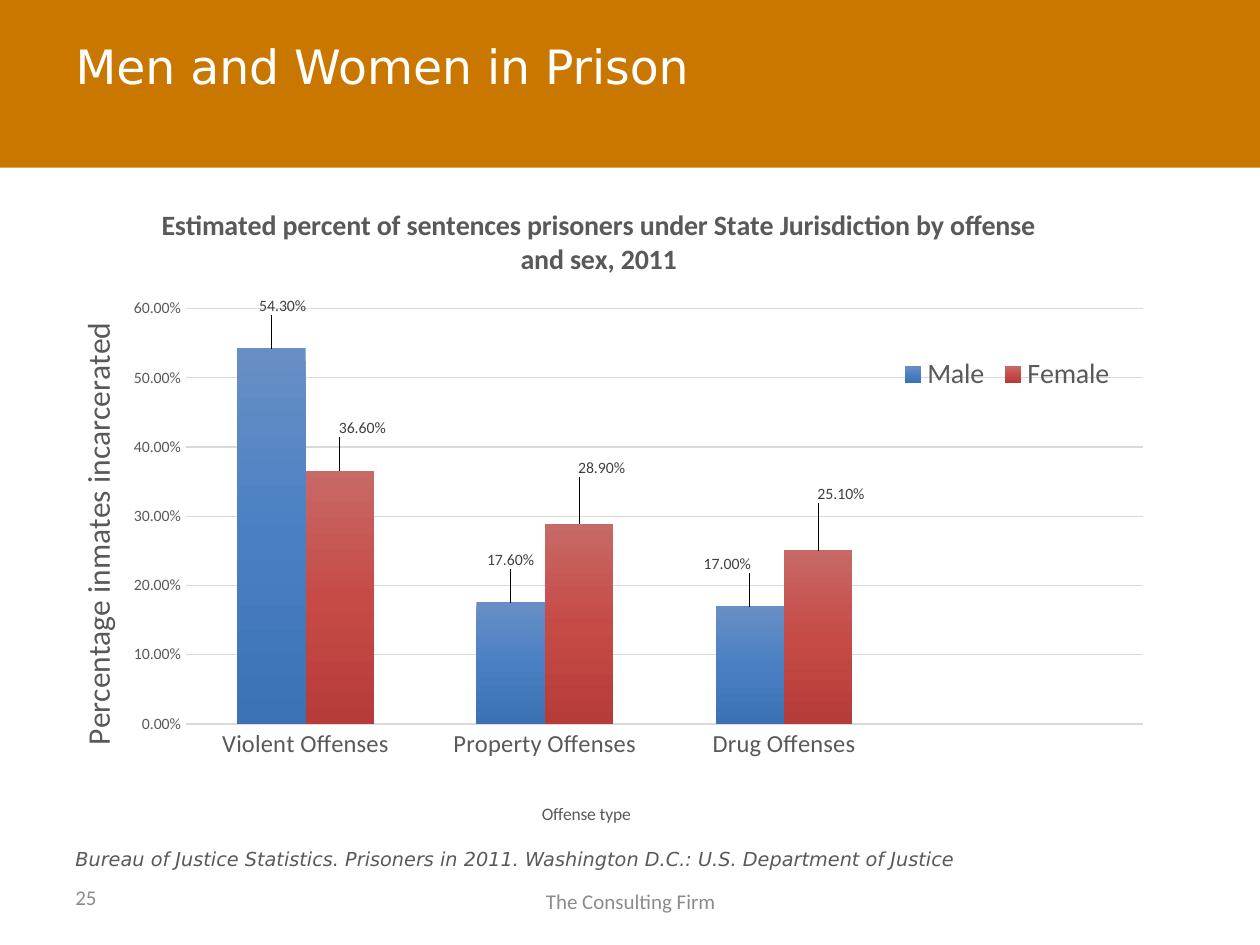
from pptx import Presentation, util as u
from pptx.chart.data import CategoryChartData
from pptx.dml.color import RGBColor
from pptx.enum import chart as ch, shapes, text
from pptx.oxml import parse_xml
from pptx.oxml.ns import nsdecls, qn

COLORS = {"band": "CA7700", "white": "FFFFFF", "text": "595959",
          "foot": "8C8C8C", "label": "404040", "grid": "D9D9D9"}
SANS, BODY = "DejaVu Sans", "Calibri"

TITLE = "Men and Women in Prison"
# text, box in cm (left, top, width, height), alignment, font
NOTES = [
    ("25", (1.27, 17.58, 5.92, 1.02), "LEFT",
     dict(size=12, name=BODY, color="foot")),
    ("The Consulting Firm", (8.69, 17.65, 8.05, 1.02), "CENTER",
     dict(size=12, name=BODY, color="foot")),
    ("Bureau of Justice Statistics. Prisoners in 2011. "
     "Washington D.C.: U.S. Department of Justice",
     (1.27, 16.94, 19.89, 0.74), "LEFT",
     dict(size=11, name=SANS, color="text", italic=True)),
]
HEAD = ("Estimated percent of sentences prisoners under State Jurisdiction "
        "by offense and sex, 2011")
CATS = ["Violent Offenses", "Property Offenses", "Drug Offenses", ""]
# values, gradient from top to bottom, label shifts as shares of the chart
SERIES = {
    "Male": ([0.543, 0.176, 0.17, None], ["688FC5", "4A80C3", "3B72B3"],
             [(0.01, -0.04), (0, -0.04), (-0.02, -0.04)]),
    "Female": ([0.366, 0.289, 0.251, None], ["C76967", "C64B47", "B63C39"],
               [(0.02, -0.04), (0.02, -0.06), (0.02, -0.06)]),
}


def style(font, color, size, **rest):
    font.color.rgb = RGBColor.from_string(COLORS[color])
    font.size = u.Pt(size)
    for key, val in {"name": BODY, "bold": False, **rest}.items():
        setattr(font, key, val)


def place(node, spot, at=1, edge=True, inner=False):
    """Give a chart part a manual layout: x, y and maybe w, h as shares."""
    for old in node.findall(qn("c:layout")):
        node.remove(old)
    tags = '<c:layoutTarget val="inner"/>' if inner else ""
    if edge:
        tags += '<c:xMode val="edge"/><c:yMode val="edge"/>'
    tags += "".join(f'<c:{k} val="{v}"/>' for k, v in zip("xywh", spot))
    node.insert(at, parse_xml(
        f'<c:layout {nsdecls("c")}><c:manualLayout>{tags}'
        "</c:manualLayout></c:layout>"))


def caption(owner, words, spot, **font):
    """Write the title of a chart or axis; spot None keeps it automatic."""
    owner.text_frame.text = words
    style(owner.text_frame.paragraphs[0].runs[0].font, "text", **font)
    if spot:
        place(owner._element, spot)


def shade(series, hexes):
    stops = "".join(f'<a:gs pos="{i * 50000}"><a:srgbClr val="{h}"/></a:gs>'
                    for i, h in enumerate(hexes))
    series._element.get_or_add_spPr().append(parse_xml(
        f'<a:gradFill {nsdecls("a")} rotWithShape="1"><a:gsLst>{stops}'
        '</a:gsLst><a:lin ang="5400000" scaled="0"/></a:gradFill>'))


def rule(line, width):
    line.color.rgb = RGBColor.from_string(COLORS["grid"])
    line.width = u.Pt(width)


def add_title(slide):
    band = slide.shapes.add_shape(shapes.MSO_SHAPE.RECTANGLE, 0, 0,
                                  u.Cm(25.4), u.Cm(3.38))
    band.shadow.inherit = False
    band.fill.solid()
    band.fill.fore_color.rgb = RGBColor.from_string(COLORS["band"])
    band.line.fill.background()
    slide.shapes._spTree.insert(2, band._element)
    box = slide.shapes.title
    box.left, box.top, box.width, box.height = map(
        u.Cm, (1.27, 0.23, 22.86, 2.46))
    frame = box.text_frame
    frame.text = TITLE
    frame.auto_size = text.MSO_AUTO_SIZE.NONE
    frame.vertical_anchor = text.MSO_ANCHOR.MIDDLE
    para = frame.paragraphs[0]
    para.alignment = text.PP_ALIGN.LEFT
    para.line_spacing = u.Pt(25)
    style(para.runs[0].font, "white", 27, name=SANS)


def add_notes(slide):
    for words, spot, side, font in NOTES:
        frame = slide.shapes.add_textbox(*map(u.Cm, spot)).text_frame
        frame.word_wrap = True
        frame.vertical_anchor = text.MSO_ANCHOR.MIDDLE
        frame.text = words
        para = frame.paragraphs[0]
        para.alignment = getattr(text.PP_ALIGN, side)
        style(para.runs[0].font, **font)


def add_bars(slide):
    data = CategoryChartData(number_format="0.00%")
    data.categories = CATS
    for name, (vals, _, _) in SERIES.items():
        data.add_series(name, vals)
    chart = slide.shapes.add_chart(
        ch.XL_CHART_TYPE.COLUMN_CLUSTERED,
        *map(u.Cm, (0.64, 3.63, 22.86, 14.02)), data).chart
    chart.font.name, chart.font.size = BODY, u.Pt(10)
    caption(chart.chart_title, HEAD, None, size=16, bold=True)
    place(chart._chartSpace.chart.plotArea, (0.136, 0.185, 0.844, 0.597),
          at=0, inner=True)

    chart.has_legend = True
    legend = chart.legend
    legend.position = ch.XL_LEGEND_POSITION.BOTTOM
    legend.include_in_layout = False
    style(legend.font, "text", 16)
    place(legend._element, (0.76, 0.25, 0.2, 0.06))

    cat, val = chart.category_axis, chart.value_axis
    caption(cat.axis_title, "Offense type", (0.447, 0.89), size=10)
    caption(val.axis_title, "Percentage inmates incarcerated",
            (0.034, 0.197), size=18)
    for axis, size in ((cat, 14), (val, 9)):
        axis.major_tick_mark = axis.minor_tick_mark = ch.XL_TICK_MARK.NONE
        style(axis.tick_labels.font, "text", size)
    rule(cat.format.line, 1)
    val.format.line.fill.background()
    rule(val.major_gridlines.format.line, 0.75)
    val.minimum_scale, val.maximum_scale, val.major_unit = 0, 0.6, 0.1
    val.tick_labels.number_format = "0.00%"
    val.tick_labels.number_format_is_linked = False

    plot = chart.plots[0]
    plot.vary_by_categories = False
    plot.gap_width, plot.overlap = 150, 0
    for series, (_, hexes, shifts) in zip(plot.series, SERIES.values()):
        shade(series, hexes)
        labels = series.data_labels
        labels.show_value = True
        labels.number_format = "0.00%"
        labels.number_format_is_linked = False
        labels.position = ch.XL_LABEL_POSITION.OUTSIDE_END
        style(labels.font, "label", 9)
        for i, shift in enumerate(shifts):
            label = series.points[i].data_label
            style(label.font, "label", 9)
            label.position = ch.XL_LABEL_POSITION.OUTSIDE_END
            place(labels._element.findall(qn("c:dLbl"))[i], shift, edge=False)


def main():
    deck = Presentation()
    deck.slide_width, deck.slide_height = u.Cm(25.4), u.Cm(19.05)
    slide = deck.slides.add_slide(deck.slide_layouts[5])
    add_title(slide)
    add_notes(slide)
    add_bars(slide)
    deck.save("out.pptx")


if __name__ == "__main__":
    main()
